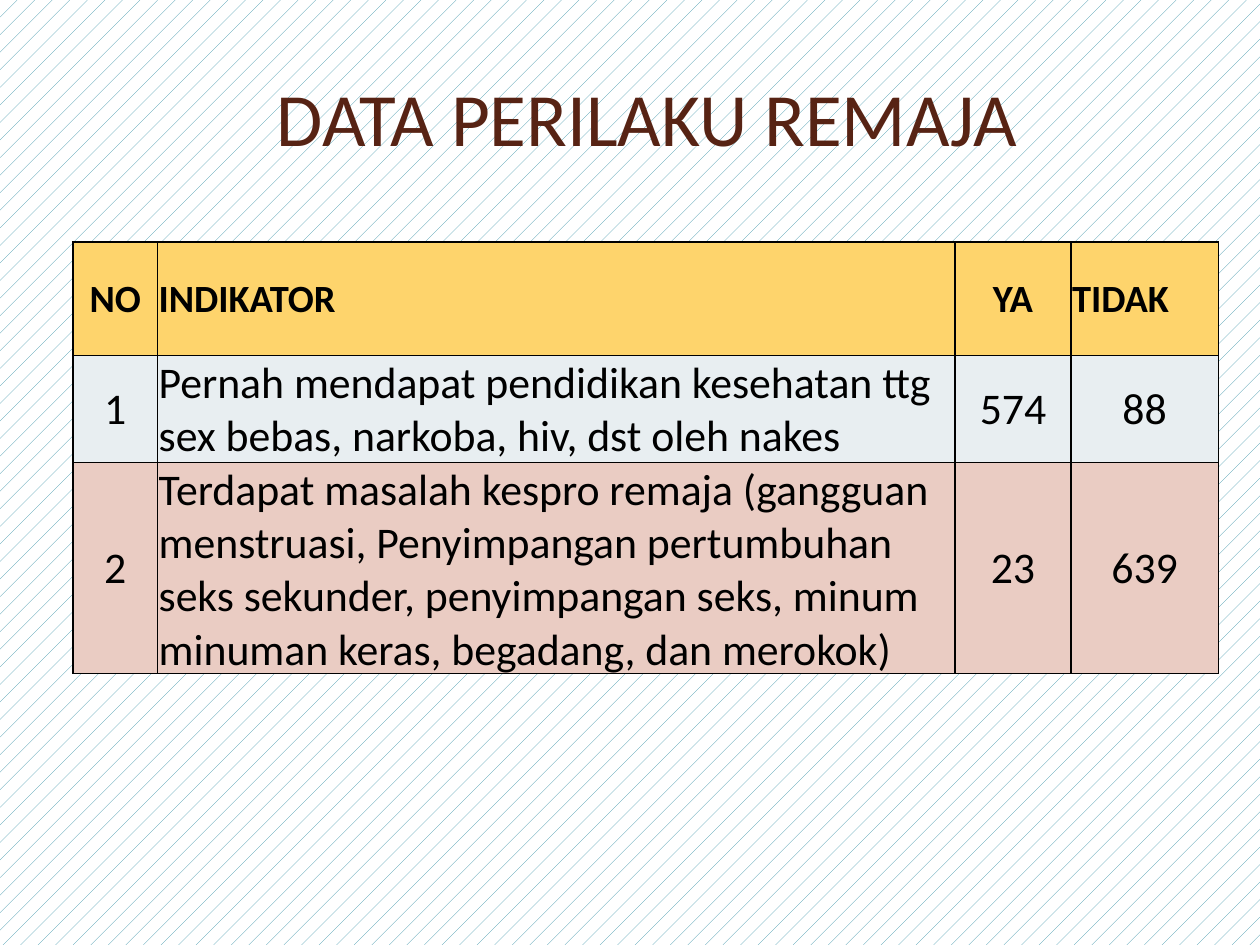
from dataclasses import dataclass

from lxml.etree import fromstring
from pptx import Presentation
from pptx.dml.color import RGBColor as RGB
from pptx.enum.dml import MSO_PATTERN as Pattern
from pptx.enum.text import MSO_ANCHOR as Anchor, PP_ALIGN as Align
from pptx.util import Inches, Pt

NS = "http://schemas.openxmlformats.org/drawingml/2006/main"


@dataclass(frozen=True)
class Theme:
    font: str = "Calibri"
    title: str = "572314"
    ink: str = "000000"
    paper: str = "FFFFFF"
    hatch: str = "3891A7"
    fills: tuple = ("FED46C", "E8EEF1", "EACCC3")
    big: int = 43
    head: int = 22
    body: int = 25
    rule: int = 1


T = Theme()
WIDE, HIGH = 10, 7.5
COLS = (0.67, 6.33, 0.92, 1.17)
ROWS = (0.9, 0.85, 1.67)
DATA = (
    ("NO", "INDIKATOR", "YA", "TIDAK"),
    ("1", "Pernah mendapat pendidikan kesehatan ttg sex bebas, narkoba, "
     "hiv, dst oleh nakes", "574", "88"),
    ("2", "Terdapat masalah kespro remaja (gangguan menstruasi, "
     "Penyimpangan pertumbuhan seks sekunder, penyimpangan seks, minum "
     "minuman keras, begadang, dan merokok)", "23", "639"),
)


def write(frame, text, size, color=T.ink, bold=False, align=Align.CENTER):
    """Put one formatted paragraph into a text frame."""
    frame.word_wrap = True
    para = frame.paragraphs[0]
    para.alignment = align
    run = para.add_run()
    run.text = text
    font = run.font
    font.name, font.size, font.bold = T.font, Pt(size), bold
    font.color.rgb = RGB.from_string(color)


def paint(slide):
    """Fill the background with a pattern."""
    fill = slide.background.fill
    fill.patterned()
    fill.pattern = Pattern.PERCENT_5
    fill.fore_color.rgb = RGB.from_string(T.hatch)
    fill.back_color.rgb = RGB.from_string(T.paper)


def title(slide, text):
    """Add the centred heading across the top."""
    box = slide.shapes.add_textbox(
        Inches(WIDE * 0.05), Inches(HIGH * 0.04),
        Inches(WIDE * 0.927), Inches(HIGH / 6))
    box.text_frame.vertical_anchor = Anchor.MIDDLE
    write(box.text_frame, text, T.big, T.title)


def border(cell):
    """Rule all four sides; lines must come before the fill."""
    props = cell._tc.get_or_add_tcPr()
    for spot, side in enumerate("LRTB"):
        props.insert(spot, fromstring(
            f'<a:ln{side} xmlns:a="{NS}" w="{Pt(T.rule)}"><a:solidFill>'
            f'<a:srgbClr val="{T.ink}"/></a:solidFill></a:ln{side}>'))


def style(cell, color):
    """Set the fill, insets, anchor and borders of a cell."""
    cell.fill.solid()
    cell.fill.fore_color.rgb = RGB.from_string(color)
    cell.margin_left = cell.margin_right = cell.margin_top = Inches(0.01)
    cell.margin_bottom = 0
    cell.vertical_anchor = Anchor.MIDDLE
    border(cell)


def grid(slide):
    """Add the indicator table."""
    table = slide.shapes.add_table(
        len(ROWS), len(COLS), Inches(WIDE * 0.058), Inches(HIGH * 0.256),
        Inches(sum(COLS)), Inches(sum(ROWS))).table
    table.horz_banding = False
    for col, width in zip(table.columns, COLS):
        col.width = Inches(width)
    for r, line in enumerate(DATA):
        table.rows[r].height = Inches(ROWS[r])
        top = r == 0
        for c, text in enumerate(line):
            cell = table.cell(r, c)
            style(cell, T.fills[r])
            left = c == 1 or (top and c == 3)
            write(cell.text_frame, text, T.head if top else T.body,
                  bold=top, align=Align.LEFT if left else Align.CENTER)


def main():
    deck = Presentation()
    deck.slide_width, deck.slide_height = Inches(WIDE), Inches(HIGH)
    slide = deck.slides.add_slide(deck.slide_layouts[6])
    paint(slide)
    title(slide, "DATA PERILAKU REMAJA")
    grid(slide)
    deck.save("out.pptx")


if __name__ == "__main__":
    main()
